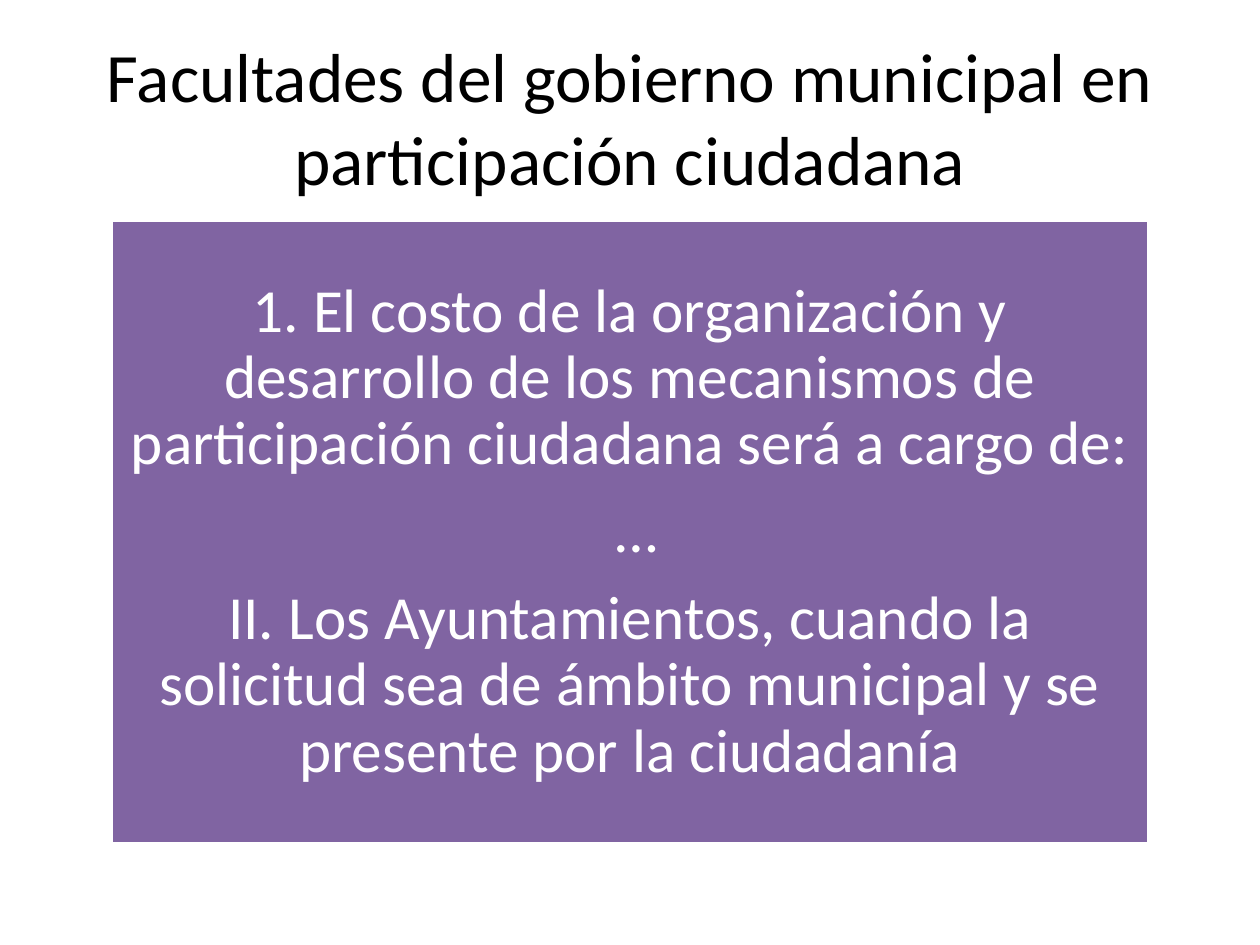
from pptx import Presentation
from pptx.dml.color import RGBColor
from pptx.enum.shapes import MSO_SHAPE
from pptx.enum.text import MSO_ANCHOR, PP_ALIGN
from pptx.util import Inches, Pt

RECTANGLE = MSO_SHAPE.RECTANGLE
MIDDLE = MSO_ANCHOR.MIDDLE
CENTER = PP_ALIGN.CENTER

FONT = "Calibri"
COLORS = {"title": "000000", "panel": "8064A2", "light": "FFFFFF"}

HEADING = "Facultades del gobierno municipal en participación ciudadana"
PROVISIONS = [
    "1. El costo de la organización y desarrollo de los mecanismos de "
    "participación ciudadana será a cargo de:",
    " …",
    "II. Los Ayuntamientos, cuando la solicitud sea de ámbito municipal y se "
    "presente por la ciudadanía",
]


def color(name):
    return RGBColor.from_string(COLORS[name])


def format_paragraph(paragraph, size, color_name):
    paragraph.alignment = CENTER
    paragraph.font.name = FONT
    paragraph.font.size = Pt(size)
    paragraph.font.color.rgb = color(color_name)


def place_heading(slide, left, top, width, height):
    heading = slide.shapes.title
    heading.left, heading.top = left, top
    heading.width, heading.height = width, height
    frame = heading.text_frame
    frame.text = HEADING
    frame.word_wrap = True
    frame.vertical_anchor = MIDDLE
    format_paragraph(frame.paragraphs[0], 39.6, "title")


def add_provisions_panel(slide, left, top, width, height):
    panel = slide.shapes.add_shape(RECTANGLE, left, top, width, height)
    panel.shadow.inherit = False
    panel.fill.solid()
    panel.fill.fore_color.rgb = color("panel")
    panel.line.color.rgb = color("light")
    panel.line.width = Pt(2)

    frame = panel.text_frame
    frame.word_wrap = True
    frame.vertical_anchor = MIDDLE
    frame.margin_left = frame.margin_right = Inches(0.15)
    frame.margin_top = frame.margin_bottom = Inches(0.15)
    frame.text = "\n".join(PROVISIONS)
    for provision in frame.paragraphs:
        provision.line_spacing = 0.9
        provision.space_after = Pt(12.25)
        format_paragraph(provision, 35, "light")


def main():
    prs = Presentation()
    prs.slide_width, prs.slide_height = Inches(10), Inches(7.5)
    slide = prs.slides.add_slide(prs.slide_layouts[5])
    place_heading(slide, Inches(0.5), Inches(0.3), Inches(9), Inches(1.25))
    add_provisions_panel(
        slide, Inches(0.88), Inches(1.75), Inches(8.24), Inches(4.95)
    )
    prs.save("out.pptx")


if __name__ == "__main__":
    main()
